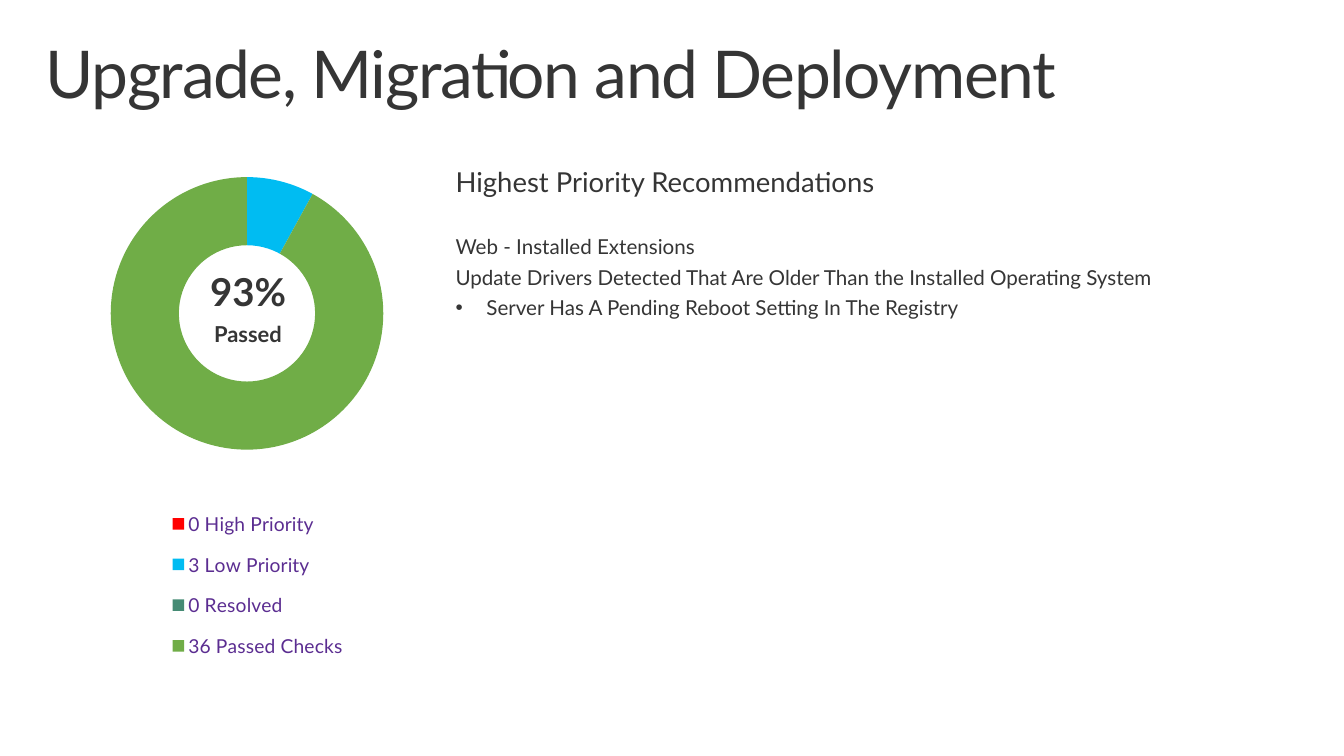
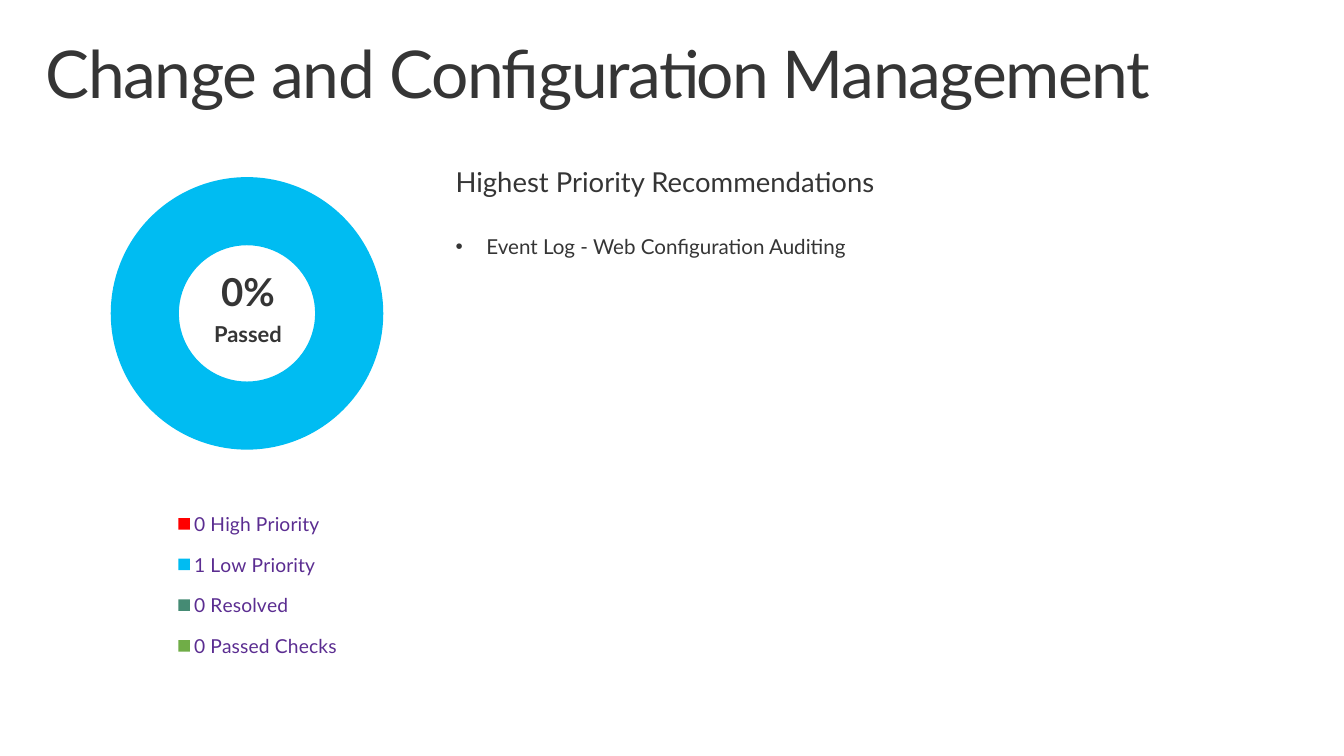
import dataclasses

import lxml.etree
import pptx
import pptx.chart.data
import pptx.dml.color
import pptx.enum.chart
import pptx.enum.text
import pptx.oxml
import pptx.oxml.ns
import pptx.util

Pt = pptx.util.Pt
qn = pptx.oxml.ns.qn


@dataclasses.dataclass(frozen=True)
class Theme:
    """Fonts, type sizes, colours and slide size shared by all slides."""
    font: str = "Lato"
    text: str = "353535"
    legend: str = "5B2D91"
    background: str = "FFFFFF"
    segments: tuple = ("FF0000", "001D49", "00BCF2", "A3008F",
                       "458B74", "D1D1D1", "70AD47")
    title_size: float = 48
    score_size: float = 28
    heading_size: float = 20
    caption_size: float = 16
    body_size: float = 15
    legend_size: float = 14
    chart_size: float = 10
    line_spacing: float = 0.9
    space_after: float = 6
    width: float = 979.2
    height: float = 550.8


@dataclasses.dataclass(frozen=True)
class Box:
    """A rectangle in points."""
    left: float
    top: float
    width: float
    height: float

    def lengths(self):
        """Return left, top, width and height as lengths."""
        return Pt(self.left), Pt(self.top), Pt(self.width), Pt(self.height)

    def inside(self, left, top, width, height):
        """Return a box offset from this one's top left corner."""
        return Box(self.left + left, self.top + top, width, height)


@dataclasses.dataclass(frozen=True)
class Report:
    """The content of one results slide."""
    title: str
    score: str
    counts: tuple
    shares: tuple
    plain_items: tuple
    bullet_items: tuple


THEME = Theme()
ALIGN = pptx.enum.text.PP_ALIGN
LEGEND_LABELS = ("High Priority", "Low Priority", "Resolved", "Passed Checks")
TITLE_BOX = Box(21.6, 23, 936, 72)
RESULTS_BOX = Box(0, 79.2, 347.8, 422.6)
ADVICE_BOX = Box(317.5, 111.6, 605.5, 90)
PLOT_LAYOUT = (0.232, 0.074, 0.571, 0.558)
LEGEND_LAYOUT = (0.29, 0.666, 0.5, 0.31)
HOLE_SIZE = 68

REPORTS = (
    Report("Upgrade, Migration and Deployment", "93%", (0, 3, 0, 36), (0, 8, 0, 92),
           ("Web - Installed Extensions",
            "Update Drivers Detected That Are Older Than the Installed Operating System"),
           ("Server Has A Pending Reboot Setting In The Registry",)),
    Report("Change and Configuration Management", "0%", (0, 1, 0, 0), (0, 100, 0, 0),
           (), ("Event Log - Web Configuration Auditing",)),
)


def rgb(value):
    """Return a colour from its hexadecimal text."""
    return pptx.dml.color.RGBColor.from_string(value)


def style_font(font, size, color=THEME.text, bold=False):
    """Apply the theme font with a size and colour."""
    font.name = THEME.font
    font.size = Pt(size)
    font.bold = bold
    font.color.rgb = rgb(color)


def add_text(paragraph, text, size, bold=False, align=ALIGN.LEFT, after=THEME.space_after):
    """Add one styled run to a paragraph and return the run."""
    paragraph.alignment = align
    paragraph.line_spacing = THEME.line_spacing
    paragraph.space_before = Pt(0)
    paragraph.space_after = Pt(after)
    run = paragraph.add_run()
    run.text = text
    style_font(run.font, size, bold=bold)
    return run


def add_bullet(paragraph, indent=22.5):
    """Give a paragraph a hanging bullet."""
    properties = paragraph._p.get_or_add_pPr()
    properties.set("marL", str(Pt(indent)))
    properties.set("indent", str(-Pt(indent)))
    lxml.etree.SubElement(properties, qn("a:buFont"), typeface="Arial")
    lxml.etree.SubElement(properties, qn("a:buChar"), char="•")


def prepare_frame(frame, horizontal, vertical, auto_size):
    """Set wrapping, top anchoring and insets of a text frame."""
    frame.word_wrap = True
    frame.auto_size = auto_size
    frame.vertical_anchor = pptx.enum.text.MSO_ANCHOR.TOP
    frame.margin_left = frame.margin_right = Pt(horizontal)
    frame.margin_top = frame.margin_bottom = Pt(vertical)


def add_text_box(slide, box):
    """Add a growing text box and return its text frame."""
    frame = slide.shapes.add_textbox(*box.lengths()).text_frame
    prepare_frame(frame, 14.4, 11.5, pptx.enum.text.MSO_AUTO_SIZE.SHAPE_TO_FIT_TEXT)
    return frame


def place_title(slide, box, text):
    """Move, fill and style the title placeholder."""
    title = slide.shapes.title
    title.left, title.top, title.width, title.height = box.lengths()
    prepare_frame(title.text_frame, 11.5, 7.2, pptx.enum.text.MSO_AUTO_SIZE.NONE)
    run = add_text(title.text_frame.paragraphs[0], text, THEME.title_size, after=0)
    run._r.get_or_add_rPr().set("spc", "-100")


def manual_layout(fractions, inner=False):
    """Build a chart layout element from x, y, width and height fractions."""
    layout = pptx.oxml.parse_xml(
        f'<c:layout {pptx.oxml.ns.nsdecls("c")}><c:manualLayout/></c:layout>')
    settings = [("layoutTarget", "inner")] if inner else []
    settings += [("xMode", "edge"), ("yMode", "edge")]
    settings += zip("xywh", map(str, fractions))
    for name, value in settings:
        lxml.etree.SubElement(layout[0], qn(f"c:{name}"), val=value)
    return layout


def replace_layout(parent, position, layout):
    """Put a layout in a chart part in place of any present one."""
    for present in parent.findall(qn("c:layout")):
        parent.remove(present)
    parent.insert(position, layout)


def spread(values, blank):
    """Put a blank between neighbouring values."""
    spaced = [blank] * (2 * len(values) - 1)
    spaced[::2] = values
    return spaced


def place_legend(chart):
    """Show the legend as a column without the blank categories."""
    chart.has_legend = True
    chart.legend.position = pptx.enum.chart.XL_LEGEND_POSITION.BOTTOM
    chart.legend.include_in_layout = False
    style_font(chart.legend.font, THEME.legend_size, THEME.legend)
    legend = chart.element.xpath(".//c:legend")[0]
    replace_layout(legend, 1, manual_layout(LEGEND_LAYOUT))
    for position, index in enumerate(range(1, len(THEME.segments), 2), 1):
        entry = legend.makeelement(qn("c:legendEntry"))
        lxml.etree.SubElement(entry, qn("c:idx"), val=str(index))
        lxml.etree.SubElement(entry, qn("c:delete"), val="1")
        legend.insert(position, entry)


def place_doughnut(slide, box, report):
    """Add the doughnut chart of check results."""
    data = pptx.chart.data.CategoryChartData()
    labels = [f"{count} {label}" for count, label in zip(report.counts, LEGEND_LABELS)]
    data.categories = spread(labels, "")
    data.add_series("Series 1", spread(report.shares, None))
    chart = slide.shapes.add_chart(
        pptx.enum.chart.XL_CHART_TYPE.DOUGHNUT, *box.lengths(), data).chart
    chart.has_title = False
    style_font(chart.font, THEME.chart_size)
    plot = chart.plots[0]
    plot.vary_by_categories = True
    for index, color in enumerate(THEME.segments):
        fill = plot.series[0].points[index].format.fill
        fill.solid()
        fill.fore_color.rgb = rgb(color)
    chart.element.xpath(".//c:holeSize")[0].set("val", str(HOLE_SIZE))
    replace_layout(chart.element.xpath(".//c:plotArea")[0], 0,
                   manual_layout(PLOT_LAYOUT, inner=True))
    place_legend(chart)


def place_results(slide, box, report):
    """Place the doughnut and the score in its hole."""
    place_doughnut(slide, box, report)
    frame = add_text_box(slide, box.inside(129.6, 108.7, 102.2, 229.7))
    add_text(frame.paragraphs[0], report.score, THEME.score_size, True, ALIGN.CENTER)
    add_text(frame.add_paragraph(), "Passed", THEME.caption_size, True, ALIGN.CENTER)


def place_advice(slide, box, report):
    """Place the recommendations under their heading."""
    frame = add_text_box(slide, box)
    add_text(frame.paragraphs[0], "Highest Priority Recommendations",
             THEME.heading_size, after=28)
    for item in report.plain_items:
        add_text(frame.add_paragraph(), item, THEME.body_size)
    for item in report.bullet_items:
        paragraph = frame.add_paragraph()
        add_text(paragraph, item, THEME.body_size)
        add_bullet(paragraph)


def add_report_slide(presentation, report):
    """Add one results slide."""
    slide = presentation.slides.add_slide(presentation.slide_layouts[5])
    slide.background.fill.solid()
    slide.background.fill.fore_color.rgb = rgb(THEME.background)
    place_title(slide, TITLE_BOX, report.title)
    place_results(slide, RESULTS_BOX, report)
    place_advice(slide, ADVICE_BOX, report)


def main():
    """Build and save the presentation."""
    presentation = pptx.Presentation()
    presentation.slide_width = Pt(THEME.width)
    presentation.slide_height = Pt(THEME.height)
    for report in REPORTS:
        add_report_slide(presentation, report)
    presentation.save("out.pptx")


if __name__ == "__main__":
    main()
